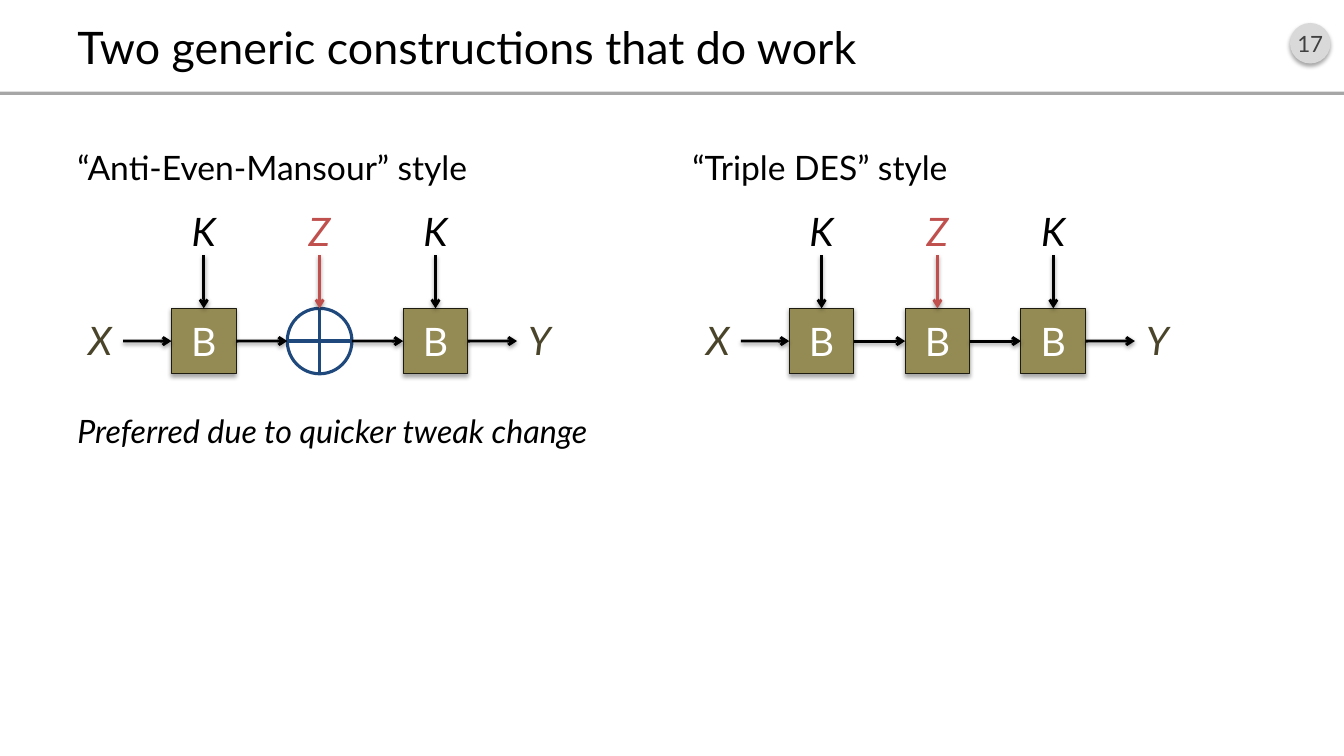
from lxml import etree
from pptx import Presentation
from pptx.dml.color import RGBColor
from pptx.enum.shapes import MSO_CONNECTOR, MSO_SHAPE
from pptx.enum.text import MSO_ANCHOR, MSO_AUTO_SIZE, PP_ALIGN
from pptx.oxml.ns import qn
from pptx.util import Cm, Pt

STRAIGHT = MSO_CONNECTOR.STRAIGHT
RECTANGLE, OVAL = MSO_SHAPE.RECTANGLE, MSO_SHAPE.OVAL
TOP, MIDDLE, BOTTOM = MSO_ANCHOR.TOP, MSO_ANCHOR.MIDDLE, MSO_ANCHOR.BOTTOM
LEFT, CENTER = PP_ALIGN.LEFT, PP_ALIGN.CENTER
NO_AUTOFIT = MSO_AUTO_SIZE.NONE
TOP_SITE, LEFT_SITE, RIGHT_SITE = 0, 1, 3

BLACK, WHITE, RED, BLUE = "000000", "FFFFFF", "C0504D", "1F497D"
OLIVE, DARK_OLIVE, OLIVE_EDGE = "948A54", "4A452A", "1E1C11"
LIGHT_GREY, GREY, DARK_GREY = "D9D9D9", "A6A6A6", "404040"

MARGIN = 1.7
COLUMN_WIDTH = 14.96
DIAGRAM_SHIFT = 15.57
STAGE_LEFT, STAGE_TOP, STAGE_STEP = 4.32, 7.77, 2.92
STAGE_WIDTH, STAGE_HEIGHT = 1.63, 1.65
LABEL_HEIGHT = 1.19


def color(value):
    return RGBColor.from_string(value)


def set_effects(shape, shadow=None):
    """Replace the theme's shadow by one of the given opacity and distance, or none."""
    effects = etree.SubElement(shape._element.spPr, qn("a:effectLst"))
    if shadow:
        opacity, distance = shadow
        outer = etree.SubElement(effects, qn("a:outerShdw"), blurRad=str(Pt(3.1)),
                                 dist=str(Pt(distance)), dir="5400000", rotWithShape="0")
        black = etree.SubElement(outer, qn("a:srgbClr"), val=BLACK)
        etree.SubElement(black, qn("a:alpha"), val=str(opacity * 1000))


def write(shape, text, size=28, ink=BLACK, italic=False, align=CENTER,
          anchor=MIDDLE, inset_x=0.0, inset_y=0.13, before=0):
    frame = shape.text_frame
    frame.word_wrap = True
    frame.auto_size = NO_AUTOFIT
    frame.vertical_anchor = anchor
    frame.margin_left = frame.margin_right = Cm(inset_x)
    frame.margin_top = frame.margin_bottom = Cm(inset_y)
    para = frame.paragraphs[0]
    para.alignment = align
    para.space_before = Pt(before)
    span = para.add_run()
    span.text = text
    span.font.name = "Lato"
    span.font.size = Pt(size)
    span.font.italic = italic
    span.font.color.rgb = color(ink)


class Page:
    """The slide, with one method for each kind of element; lengths are in centimetres."""

    def __init__(self, deck):
        self.slide = deck.slides.add_slide(deck.slide_layouts[5])
        self.shapes = self.slide.shapes

    def title(self, text):
        title = self.slide.shapes.title
        title.left, title.top, title.width, title.height = Cm(MARGIN), Cm(0.41), Cm(30.48), Cm(1.52)
        write(title, text, size=32, align=LEFT, inset_x=0.25)

    def shape(self, kind, left, top, width, height, fill=None, edge=None,
              weight=0.75, shadow=None):
        shape = self.shapes.add_shape(kind, Cm(left), Cm(top), Cm(width), Cm(height))
        if fill:
            shape.fill.solid()
            shape.fill.fore_color.rgb = color(fill)
        else:
            shape.fill.background()
        if edge:
            shape.line.color.rgb = color(edge)
            shape.line.width = Pt(weight)
        else:
            shape.line.fill.background()
        set_effects(shape, shadow)
        return shape

    def text(self, text, left, top, width, height, **style):
        box = self.shapes.add_textbox(Cm(left), Cm(top), Cm(width), Cm(height))
        write(box, text, **style)

    def body(self, text, left, top, height, **style):
        self.text(text, left, top, COLUMN_WIDTH, height, align=LEFT,
                  inset_x=0.25, before=8, **style)

    def label(self, text, center, top, ink):
        self.text(text, center - STAGE_WIDTH / 2, top, STAGE_WIDTH, LABEL_HEIGHT,
                  ink=ink, italic=True, anchor=TOP, inset_y=0)

    def line(self, start, end, ink=BLACK, weight=2.25):
        x1, y1 = start
        x2, y2 = end
        line = self.shapes.add_connector(STRAIGHT, Cm(x1), Cm(y1), Cm(x2), Cm(y2))
        line.line.color.rgb = color(ink)
        line.line.width = Pt(weight)
        return line

    def plain_line(self, start, end, ink):
        set_effects(self.line(start, end, ink))

    def arrow(self, start, end, ink=BLACK, source=None, target=None, target_site=LEFT_SITE):
        """Draw an arrow, joined to the source's right side and the target's given side."""
        arrow = self.line(start, end, ink, weight=2)
        etree.SubElement(arrow.line._get_or_add_ln(), qn("a:tailEnd"), type="arrow")
        set_effects(arrow, shadow=(38, 1.6))
        if source is not None:
            arrow.begin_connect(source, RIGHT_SITE)
        if target is not None:
            arrow.end_connect(target, target_site)

    def cipher(self, left):
        box = self.shape(RECTANGLE, left, STAGE_TOP, STAGE_WIDTH, STAGE_HEIGHT,
                         fill=OLIVE, edge=OLIVE_EDGE, shadow=(35, 1.8))
        write(box, "B", ink=WHITE)
        return box

    def xor(self, left):
        """Draw a circled plus; its sides are not joined to arrows."""
        right, bottom = left + STAGE_WIDTH, STAGE_TOP + STAGE_HEIGHT
        center, middle = left + STAGE_WIDTH / 2, STAGE_TOP + STAGE_HEIGHT / 2
        self.shape(OVAL, left, STAGE_TOP, STAGE_WIDTH, STAGE_HEIGHT, edge=BLUE, weight=2.25)
        self.plain_line((left, middle), (right, middle), BLUE)
        self.plain_line((center, STAGE_TOP), (center, bottom), BLUE)

    def diagram(self, origin, middle_stage):
        """Chain X through three keyed stages to Y."""
        self.shapes = self.slide.shapes.add_group_shape().shapes
        middle = STAGE_TOP + STAGE_HEIGHT / 2
        lefts = [origin + STAGE_LEFT + i * STAGE_STEP for i in range(3)]
        stages = [draw(left) for draw, left in zip((self.cipher, middle_stage, self.cipher), lefts)]
        for text, center in (("X", 2.52), ("Y", 13.6)):
            self.label(text, origin + center, 7.96, DARK_OLIVE)

        for key, ink, left, stage in zip("KZK", (BLACK, RED, BLACK), lefts, stages):
            center = left + STAGE_WIDTH / 2
            self.label(key, center, 5.23, ink)
            self.arrow((center, 6.43), (center, STAGE_TOP), ink,
                       target=stage, target_site=TOP_SITE)

        starts = [origin + 3.1] + [left + STAGE_WIDTH for left in lefts]
        ends = lefts + [origin + 13.03]
        for start, end, source, target in zip(starts, ends, [None] + stages, stages + [None]):
            self.arrow((start, middle), (end, middle), source=source, target=target)
        self.shapes = self.slide.shapes


def main():
    deck = Presentation()
    deck.slide_width, deck.slide_height = Cm(33.87), Cm(19.05)
    page = Page(deck)

    number = page.shape(OVAL, 32.51, 0.58, 1.02, 1.02, fill=LIGHT_GREY, shadow=(35, 1.8))
    write(number, "17", size=16, ink=DARK_GREY)
    page.shape(RECTANGLE, 0, 2.31, 33.87, 0.08, fill=GREY)
    page.title("Two generic constructions that do work")

    page.body("“Anti-Even-Mansour” style", MARGIN, 3.07, 1.78, size=24, anchor=BOTTOM)
    page.body("“Triple DES” style", 17.2, 3.07, 1.78, size=24, anchor=BOTTOM)
    page.body("Preferred due to quicker tweak change", MARGIN, 10.24, 7.44,
              size=23, italic=True, anchor=TOP)

    page.diagram(0, page.xor)
    page.diagram(DIAGRAM_SHIFT, page.cipher)
    deck.save("out.pptx")


if __name__ == "__main__":
    main()
